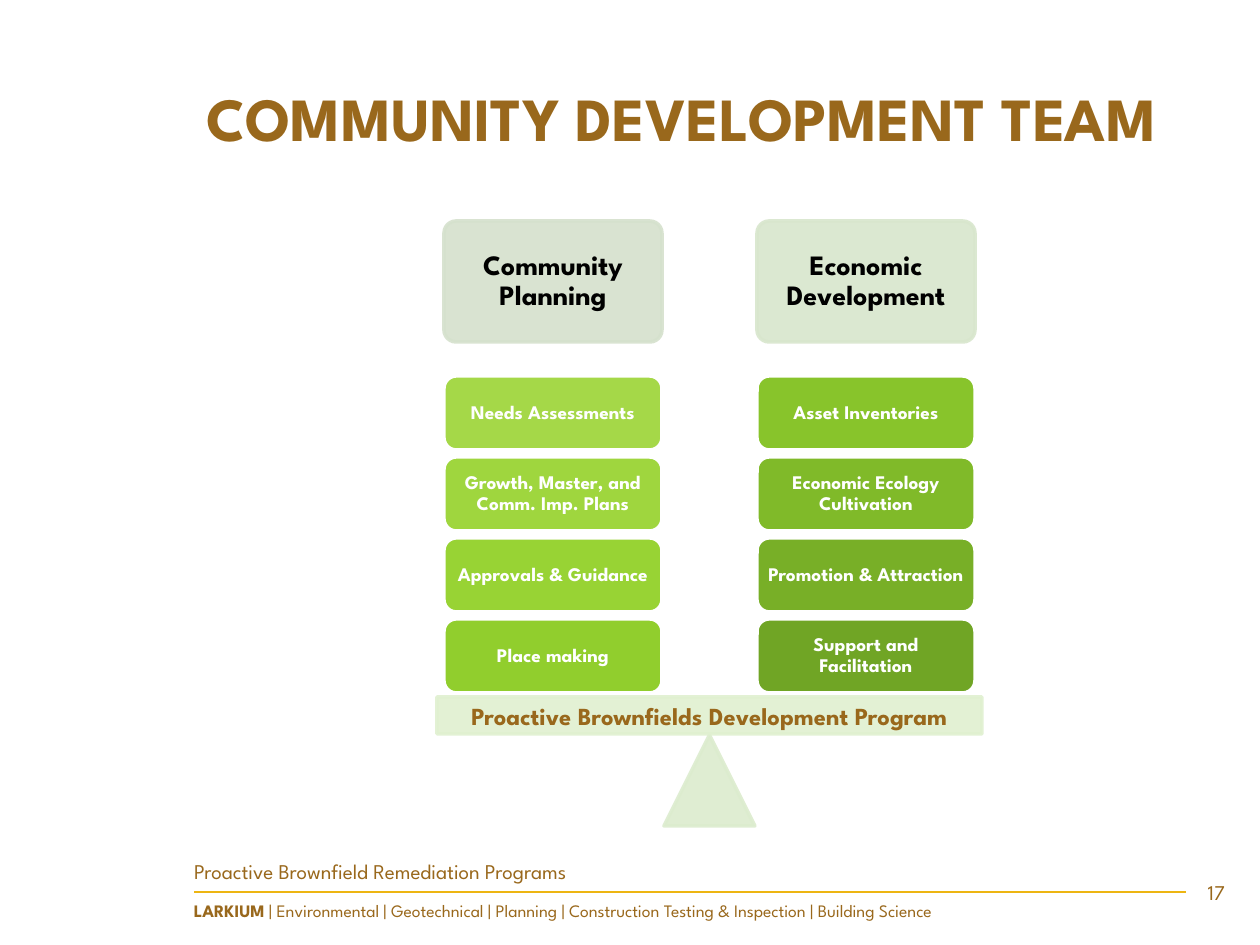
from dataclasses import dataclass, field
from typing import Any, NamedTuple

from lxml import etree
from pptx import Presentation
from pptx import util as u
from pptx.dml import color
from pptx.enum import shapes, text
from pptx.oxml import ns

SCALE = 914400 / 126


@dataclass(frozen=True)
class Theme:
    font: str = "League Spartan"
    brown: str = "99681C"
    gold: str = "EDB512"
    white: str = "FFFFFF"
    black: str = "000000"
    bar: str = "E0F0D0"
    pivot: str = "DCECCE"
    sizes: dict[str, int] = field(default_factory=lambda: {
        "title": 35, "header": 16, "bar": 14, "note": 12, "card": 11, "footer": 10})


THEME = Theme()


class Area(NamedTuple):
    left: int
    top: int
    width: int
    height: int


class Span(NamedTuple):
    words: str
    size: str
    tint: str = THEME.brown
    bold: bool = False


class Card(NamedTuple):
    words: str
    fill: str


class Column(NamedTuple):
    left: int
    header: Card
    cards: list[Card]


COLUMNS = [
    Column(444, Card("Community Planning", "D5E1CD"), [
        Card("Needs Assessments", "A5D848"),
        Card("Growth, Master, and Comm. Imp. Plans", "9FD63E"),
        Card("Approvals & Guidance", "98D334"),
        Card("Place making", "91CE2D"),
    ]),
    Column(757, Card("Economic Development", "D8E6CD"), [
        Card("Asset Inventories", "88C42B"),
        Card("Economic Ecology Cultivation", "80BA29"),
        Card("Promotion & Attraction", "78AF27"),
        Card("Support and Facilitation", "70A525"),
    ]),
]
COLUMN_WIDTH = 218
HEADER_TOP, HEADER_HEIGHT = 221, 121
CARD_TOP, CARD_HEIGHT, CARD_PITCH = 376, 74, 81


def px(length: int) -> u.Emu:
    return u.Emu(round(length * SCALE))


def emu(area: Area) -> list[u.Emu]:
    return [px(length) for length in area]


def apply(target: Any, values: dict[str, Any]) -> None:
    for name, value in values.items():
        setattr(target, name, value)


def write(box: Any, spans: list[Span], inset: int = 0, anchor: Any = text.MSO_ANCHOR.TOP,
          align: Any = text.PP_ALIGN.LEFT, spacing: float = 1.0) -> None:
    frame = box.text_frame
    margins = {f"margin_{side}": px(inset) for side in ("left", "top", "right", "bottom")}
    apply(frame, {"word_wrap": True, "auto_size": text.MSO_AUTO_SIZE.NONE,
                  "vertical_anchor": anchor, **margins})
    para = frame.paragraphs[0]
    apply(para, {"alignment": align, "line_spacing": spacing})
    for item in spans:
        span = para.add_run()
        span.text = item.words
        apply(span.font, {"name": THEME.font, "size": u.Pt(THEME.sizes[item.size]),
                          "bold": item.bold})
        span.font.color.rgb = color.RGBColor.from_string(item.tint)


def draw_shape(page: Any, kind: Any, area: Area, fill: str, outline: str,
               opacity: int = 100) -> Any:
    shape = page.shapes.add_shape(kind, *emu(area))
    shape.shadow.inherit = False
    shape.fill.solid()
    shape.fill.fore_color.rgb = color.RGBColor.from_string(fill)
    shape.line.color.rgb = color.RGBColor.from_string(outline)
    shape.line.width = u.Pt(2)
    if opacity < 100:
        for tint in shape.element.spPr.iter(ns.qn("a:srgbClr")):
            etree.SubElement(tint, ns.qn("a:alpha"), val=str(opacity * 1000))
    return shape


def draw_column(page: Any, column: Column) -> None:
    rounded = shapes.MSO_SHAPE.ROUNDED_RECTANGLE
    centred = {"anchor": text.MSO_ANCHOR.MIDDLE, "align": text.PP_ALIGN.CENTER, "spacing": 0.9}
    area = Area(column.left, HEADER_TOP, COLUMN_WIDTH, HEADER_HEIGHT)
    header = draw_shape(page, rounded, area, column.header.fill, column.header.fill, 90)
    header.adjustments[0] = 0.1
    write(header, [Span(column.header.words, "header", THEME.black, True)], 9, **centred)
    for row, card in enumerate(column.cards):
        area = Area(column.left, CARD_TOP + row * CARD_PITCH, COLUMN_WIDTH, CARD_HEIGHT)
        box = draw_shape(page, rounded, area, card.fill, THEME.white)
        write(box, [Span(card.words, "card", THEME.white, True)], 6, **centred)


def draw_balance(page: Any) -> None:
    draw_shape(page, shapes.MSO_SHAPE.ISOSCELES_TRIANGLE, Area(664, 735, 91, 91),
               THEME.pivot, THEME.pivot, 90)
    bar = draw_shape(page, shapes.MSO_SHAPE.RECTANGLE, Area(437, 697, 545, 37),
                     THEME.bar, THEME.bar, 90)
    write(bar, [Span("Proactive Brownfields Development Program", "bar", bold=True)],
          anchor=text.MSO_ANCHOR.MIDDLE, align=text.PP_ALIGN.CENTER)


def draw_title(page: Any) -> None:
    title = page.shapes.title
    apply(title, dict(zip(("left", "top", "width", "height"), emu(Area(194, 38, 1032, 158)))))
    write(title, [Span("COMMUNITY DEVELOPMENT TEAM", "title", bold=True)], 12,
          anchor=text.MSO_ANCHOR.MIDDLE)


def draw_footer(page: Any) -> None:
    rule = page.shapes.add_connector(shapes.MSO_CONNECTOR.STRAIGHT,
                                     px(1186), px(892), px(194), px(892))
    rule.line.color.rgb = color.RGBColor.from_string(THEME.gold)
    rule.line.width = u.Pt(1)
    etree.SubElement(rule.element.spPr, ns.qn("a:effectLst"))

    services = ["Environmental", "Geotechnical", "Planning",
                "Construction Testing & Inspection", "Building Science"]
    company = page.shapes.add_textbox(*emu(Area(194, 900, 983, 29)))
    write(company, [Span("LARKIUM", "footer", bold=True),
                    Span(" | " + " | ".join(services), "footer")])
    programme = page.shapes.add_textbox(*emu(Area(194, 849, 992, 35)))
    write(programme, [Span("Proactive Brownfield Remediation Programs", "note")],
          anchor=text.MSO_ANCHOR.BOTTOM)
    number = page.shapes.add_textbox(*emu(Area(1186, 878, 39, 29)))
    write(number, [Span("17", "note")], anchor=text.MSO_ANCHOR.MIDDLE,
          align=text.PP_ALIGN.RIGHT)


def main() -> None:
    deck = Presentation()
    apply(deck, {"slide_width": px(1260), "slide_height": px(945)})
    page = deck.slides.add_slide(deck.slide_layouts[5])
    draw_title(page)
    draw_footer(page)
    for column in COLUMNS:
        draw_column(page, column)
    draw_balance(page)
    deck.save("out.pptx")


if __name__ == "__main__":
    main()
